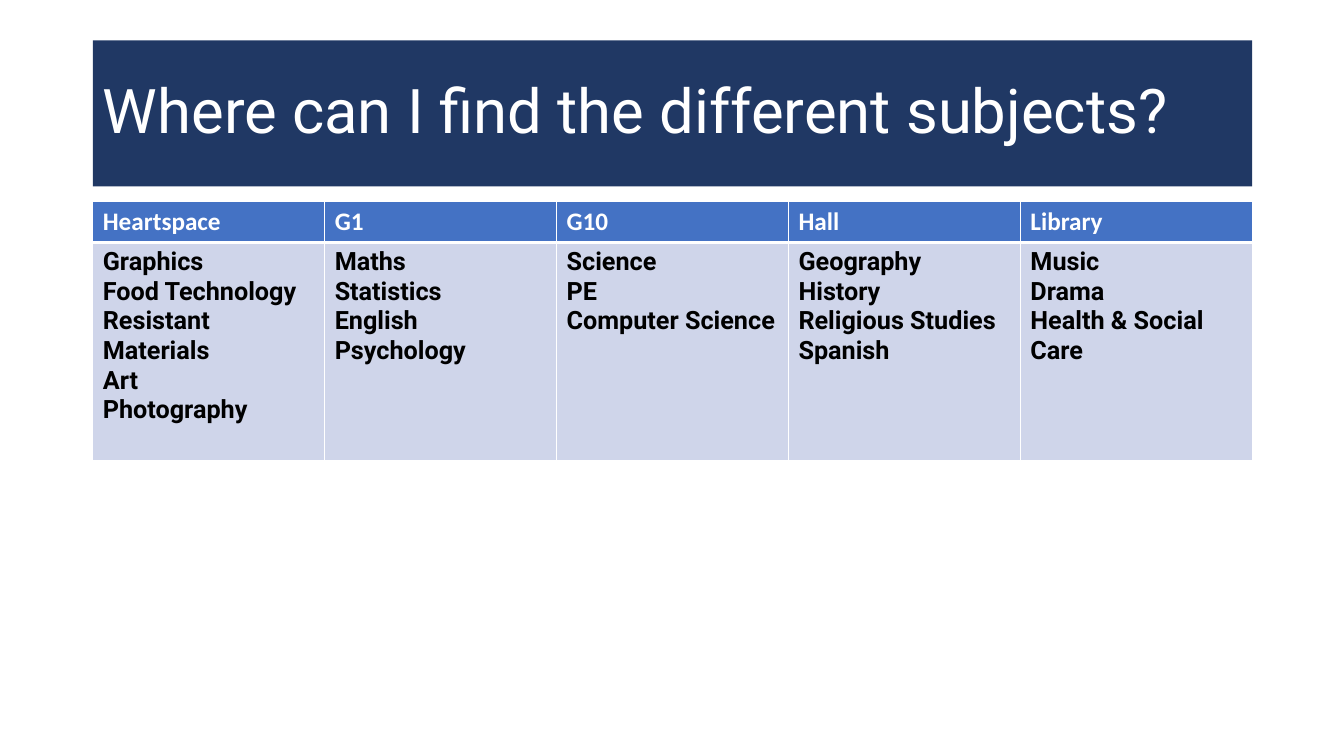
from lxml import etree
from pptx import Presentation
from pptx.dml.color import RGBColor
from pptx.enum import text
from pptx.oxml import ns
from pptx.util import Inches, Pt

NAVY = RGBColor(0x20, 0x38, 0x64)
BLUE = RGBColor(0x44, 0x72, 0xC4)
PALE = RGBColor(0xCF, 0xD5, 0xEA)
WHITE = RGBColor(0xFF, 0xFF, 0xFF)
BLACK = RGBColor(0, 0, 0)

SUBJECTS = {
    "Heartspace": ["Graphics", "Food Technology", "Resistant Materials", "Art", "Photography"],
    "G1": ["Maths", "Statistics", "English", "Psychology"],
    "G10": ["Science", "PE", "Computer Science"],
    "Hall": ["Geography", "History", "Religious Studies", "Spanish"],
    "Library": ["Music", "Drama", "Health & Social Care"],
}


def write(tf, lines, font="Roboto", size=18, color=BLACK, bold=False, spacing=None):
    for i, line in enumerate(lines):
        p = tf.add_paragraph() if i else tf.paragraphs[0]
        p.alignment = text.PP_ALIGN.LEFT
        if spacing:
            p.line_spacing = spacing
        r = p.add_run()
        r.text = line
        r.font.name = font
        r.font.size = Pt(size)
        r.font.bold = bold
        r.font.color.rgb = color


def set_borders(cell, top=1, bottom=1):
    tc_pr = cell._tc.get_or_add_tcPr()
    for side, width in (("L", 1), ("R", 1), ("T", top), ("B", bottom)):
        ln = etree.SubElement(tc_pr, ns.qn(f"a:ln{side}"), w=str(Pt(width)))
        fill = etree.SubElement(ln, ns.qn("a:solidFill"))
        etree.SubElement(fill, ns.qn("a:srgbClr"), val=str(WHITE))


def fill_cell(cell, lines, fill, top=1, bottom=1, **fmt):
    set_borders(cell, top, bottom)
    cell.fill.solid()
    cell.fill.fore_color.rgb = fill
    write(cell.text_frame, lines, bold=True, **fmt)


def add_title(s, title, left, top, width, height):
    sp = s.shapes.title
    sp.left, sp.top, sp.width, sp.height = left, top, width, height
    sp.fill.solid()
    sp.fill.fore_color.rgb = NAVY
    tf = sp.text_frame
    tf.word_wrap = True
    tf.auto_size = text.MSO_AUTO_SIZE.NONE
    tf.vertical_anchor = text.MSO_ANCHOR.MIDDLE
    write(tf, [title], size=44, color=WHITE, spacing=0.9)


def add_subject_table(s, subjects, left, top, width, height):
    table = s.shapes.add_table(2, len(subjects), left, top, width, height).table
    header_height = Inches(0.4)
    table.rows[0].height = header_height
    table.rows[1].height = height - header_height
    for col, (place, names) in enumerate(subjects.items()):
        fill_cell(table.cell(0, col), [place], BLUE, bottom=3, font="Calibri", color=WHITE)
        fill_cell(table.cell(1, col), names, PALE, top=3)


def main():
    prs = Presentation()
    prs.slide_width, prs.slide_height = Inches(13.33), Inches(7.5)
    s = prs.slides.add_slide(prs.slide_layouts[5])
    left, width = Inches(0.92), Inches(11.5)
    add_title(s, "Where can I find the different subjects?", left, Inches(0.4), width, Inches(1.45))
    add_subject_table(s, SUBJECTS, left, Inches(2), width, Inches(2.56))
    prs.save("out.pptx")


if __name__ == "__main__":
    main()
